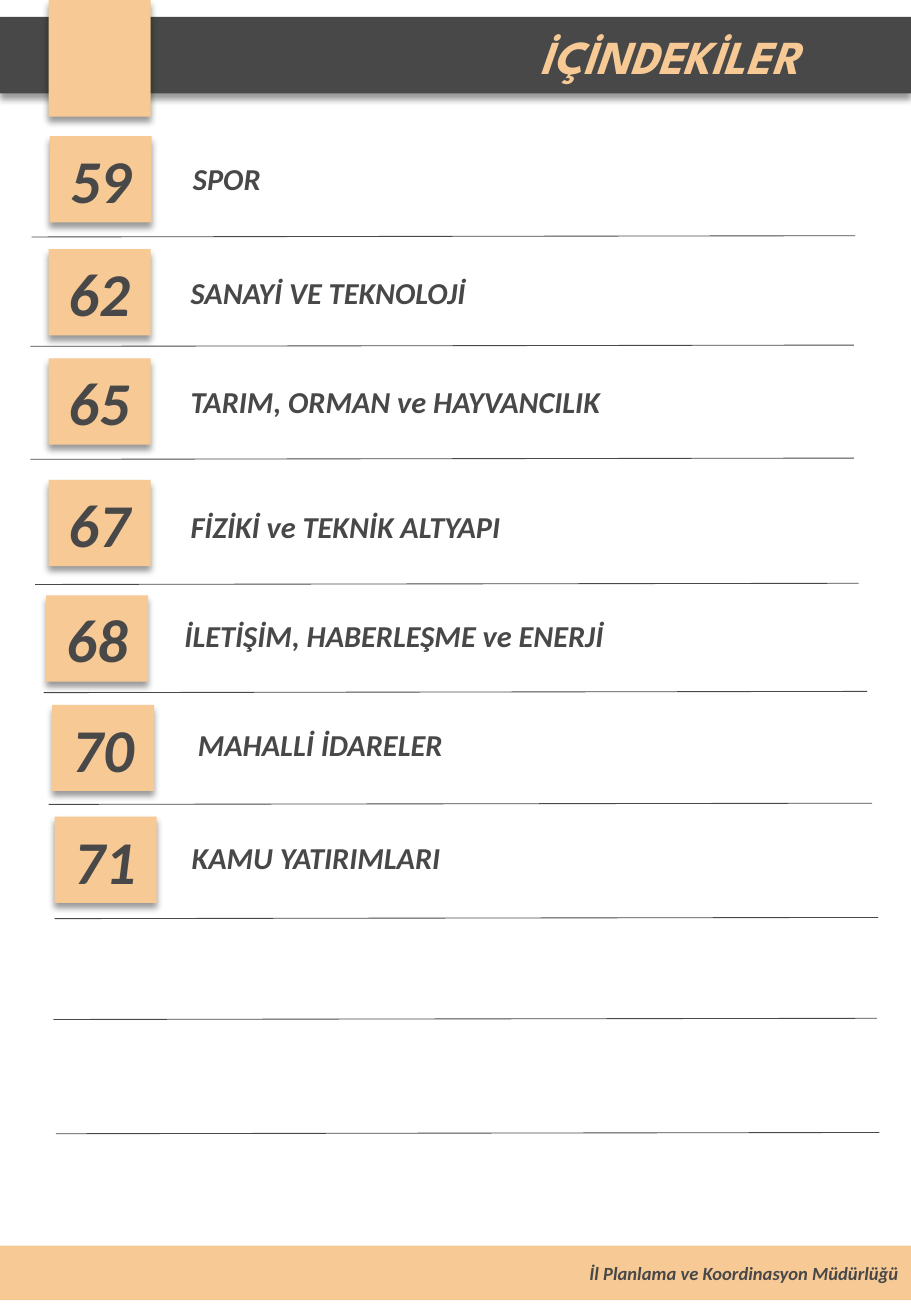
from lxml.etree import SubElement
from pptx import Presentation
from pptx.dml.color import RGBColor
from pptx.enum.shapes import MSO_CONNECTOR as Connector, MSO_SHAPE as Shape
from pptx.enum.text import MSO_ANCHOR as Anchor, PP_ALIGN as Align
from pptx.oxml.ns import qn
from pptx.util import Inches, Pt

COLORS = {"dark": "484848", "peach": "F6C995", "shadow": "000000"}
PAGE_W, PAGE_H = 7.5, 10.83
TILE_W, TILE_H = 0.84, 0.71
RULE_W, RULE_RISE = 6.78, 0.01

# page number, tile left and top, topic, topic left and top
ENTRIES = [
    ("59", 0.41, 1.12, "SPOR", 1.49, 1.27),
    ("62", 0.4, 2.05, "SANAYİ VE TEKNOLOJİ", 1.47, 2.21),
    ("65", 0.4, 2.95, "TARIM, ORMAN ve HAYVANCILIK", 1.47, 3.1),
    ("67", 0.4, 3.95, "FİZİKİ ve TEKNİK ALTYAPI", 1.47, 4.13),
    ("68", 0.38, 4.9, "İLETİŞİM, HABERLEŞME ve ENERJİ", 1.42, 5.03),
    ("70", 0.43, 5.8, "MAHALLİ İDARELER", 1.53, 5.93),
    ("71", 0.45, 6.72, "KAMU YATIRIMLARI", 1.48, 6.86),
]
# left end of each ruled line
RULES = [(0.26, 1.95), (0.25, 2.85), (0.25, 3.78), (0.29, 4.81), (0.36, 5.7),
         (0.4, 6.62), (0.45, 7.56), (0.44, 8.39), (0.46, 9.33)]


def rgb(name):
    return RGBColor.from_string(COLORS[name])


def write(holder, text, size, color="dark", align=Align.LEFT, font="Calibri"):
    frame = holder.text_frame
    frame.word_wrap = True
    paragraph = frame.paragraphs[0]
    paragraph.text = text
    paragraph.alignment = align
    paragraph.font.name = font
    paragraph.font.size = Pt(size)
    paragraph.font.bold = paragraph.font.italic = True
    paragraph.font.color.rgb = rgb(color)
    return frame


def add_block(slide, left, top, width, height, color, shadow=True):
    block = slide.shapes.add_shape(
        Shape.RECTANGLE, Inches(left), Inches(top), Inches(width), Inches(height))
    block.fill.solid()
    block.fill.fore_color.rgb = rgb(color)
    block.line.fill.background()
    block.shadow.inherit = False
    block.text_frame.vertical_anchor = Anchor.MIDDLE
    if shadow:
        effects = block._element.spPr.find(qn("a:effectLst"))
        outer = SubElement(effects, qn("a:outerShdw"), blurRad=str(Pt(4)),
                           dist=str(Pt(3)), dir="5400000", rotWithShape="0")
        tint = SubElement(outer, qn("a:srgbClr"), val=COLORS["shadow"])
        SubElement(tint, qn("a:alpha"), val="40000")
    return block


def add_header(slide, left, top, width, height):
    band = add_block(slide, left, top, width, height, "dark")
    title = write(band, "İÇİNDEKİLER", 28, "peach", Align.CENTER, "League Spartan")
    title.margin_left = Inches(3.62)
    # Bookmark tab hanging from the page edge
    add_block(slide, left + 0.4, 0, TILE_W, 0.96, "peach")


def add_entry(slide, left, top, number, topic, topic_left, topic_top):
    tile = add_block(slide, left, top, TILE_W, TILE_H, "peach")
    write(tile, number, 36, align=Align.CENTER)
    label = slide.shapes.add_textbox(
        Inches(topic_left), Inches(topic_top), Inches(4.45), Inches(0.4))
    write(label, topic, 18)


def add_rule(slide, left, top):
    rule = slide.shapes.add_connector(
        Connector.STRAIGHT, Inches(left), Inches(top),
        Inches(left + RULE_W), Inches(top - RULE_RISE))
    rule.line.color.rgb = rgb("dark")
    rule.line.width = Pt(0.5)
    SubElement(rule._element.spPr, qn("a:effectLst"))


def add_footer(slide, left, top, width, height):
    band = add_block(slide, left, top, width, height, "peach", shadow=False)
    write(band, "İl Planlama ve Koordinasyon Müdürlüğü", 11, align=Align.RIGHT)


def main():
    deck = Presentation()
    deck.slide_width, deck.slide_height = Inches(PAGE_W), Inches(PAGE_H)
    slide = deck.slides.add_slide(deck.slide_layouts[6])
    add_header(slide, 0, 0.14, PAGE_W, 0.63)
    add_footer(slide, 0, 10.25, PAGE_W, 0.45)
    # Contents list
    for left, top in RULES:
        add_rule(slide, left, top)
    for number, left, top, topic, topic_left, topic_top in ENTRIES:
        add_entry(slide, left, top, number, topic, topic_left, topic_top)
    deck.save("out.pptx")


if __name__ == "__main__":
    main()
